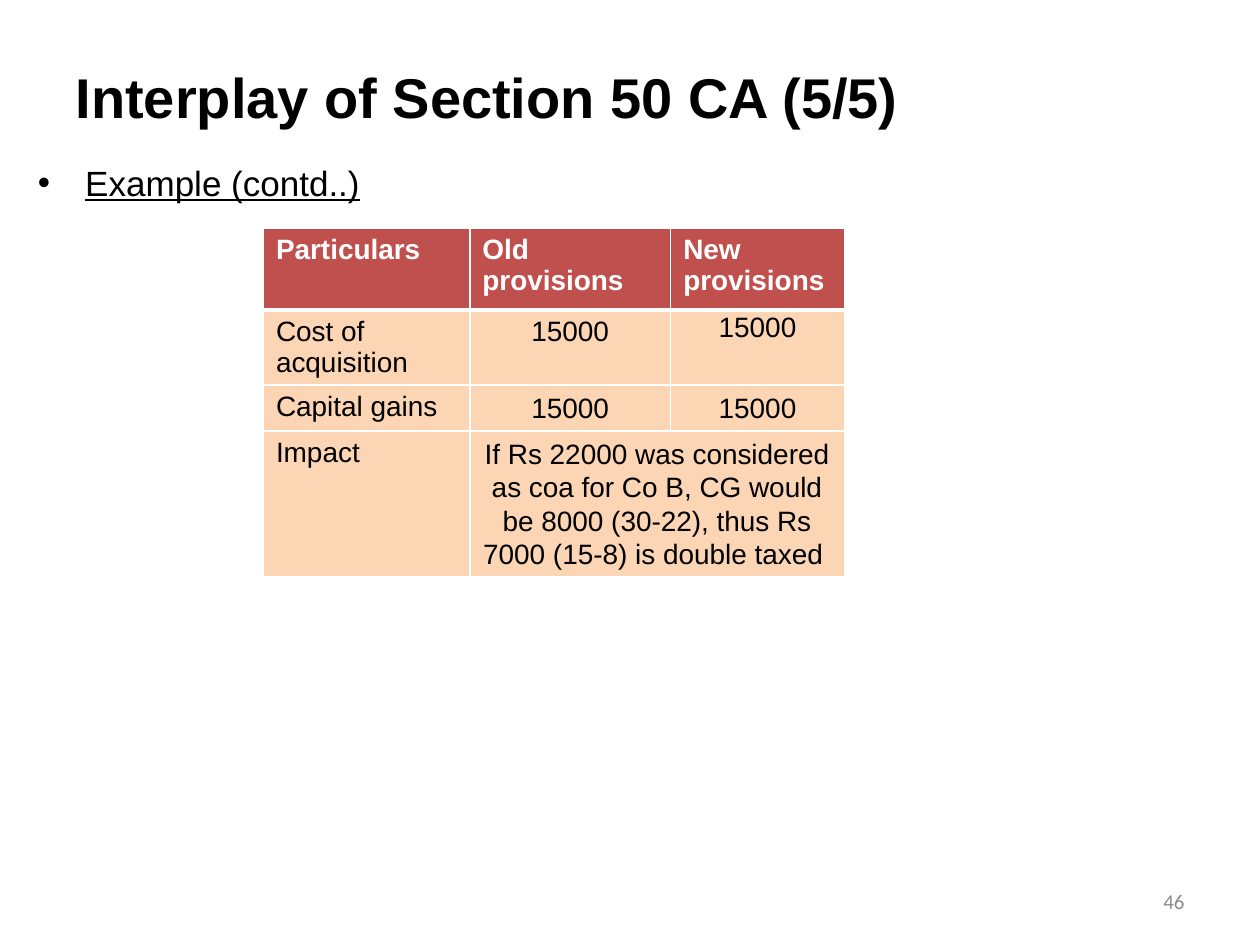
import dataclasses
import typing

import pptx
import pptx.dml.color
import pptx.enum.text
import pptx.oxml
import pptx.oxml.ns
import pptx.util

Cm = pptx.util.Cm
Align = pptx.enum.text.PP_ALIGN
Anchor = pptx.enum.text.MSO_ANCHOR


@dataclasses.dataclass(frozen=True)
class Theme:
    font: str = "Arial"
    foot_font: str = "Calibri"
    black: str = "000000"
    white: str = "FFFFFF"
    head: str = "C0504D"
    band: str = "FCD5B5"
    grey: str = "8C8C8C"
    title: int = 32
    body: int = 20
    cell: int = 16
    foot: int = 12


@dataclasses.dataclass(frozen=True)
class Entry:
    text: str
    align: typing.Any = Align.LEFT
    line: typing.Optional[float] = None
    tight: bool = False


THEME = Theme()
WIDTHS = (4.16, 4.05, 3.5)
HEIGHTS = (1.65, 1.5, 0.93, 2.92)
IMPACT = ("If Rs 22000 was considered as coa for Co B, CG would be "
          "8000 (30-22), thus Rs 7000 (15-8) is double taxed ")
SUM = Entry("15000", Align.CENTER, 1.07)
ROWS = (
    (Entry("Particulars"), Entry("Old provisions"), Entry("New provisions")),
    (Entry("Cost of acquisition"), Entry("15000", Align.CENTER),
     dataclasses.replace(SUM, tight=True)),
    (Entry("Capital gains"), SUM, SUM),
    (Entry("Impact"), Entry(IMPACT, Align.CENTER, 1.07)),
)


def place(shape, left: float, top: float, width: float, height: float) -> None:
    shape.left, shape.top = Cm(left), Cm(top)
    shape.width, shape.height = Cm(width), Cm(height)


def style(frame, size: int, color: str, font: str = THEME.font,
          bold: bool = False, align: typing.Any = Align.LEFT) -> None:
    for para in frame.paragraphs:
        para.alignment = align
        for run in para.runs:
            run.font.name = font
            run.font.size = pptx.util.Pt(size)
            run.font.bold = bold
            run.font.color.rgb = pptx.dml.color.RGBColor.from_string(color)


def border(cell, base: int) -> None:
    """Rule all four sides in white; base is the bottom width in points."""
    props = cell._tc.get_or_add_tcPr()
    for side, width in (("L", 1), ("R", 1), ("T", 1), ("B", base)):
        props.append(pptx.oxml.parse_xml(
            f'<a:ln{side} {pptx.oxml.ns.nsdecls("a")} w="{pptx.util.Pt(width)}">'
            f'<a:solidFill><a:srgbClr val="{THEME.white}"/></a:solidFill>'
            f'</a:ln{side}>'))


def paint(cell, head: bool, base: int) -> None:
    border(cell, base)
    cell.fill.solid()
    cell.fill.fore_color.rgb = pptx.dml.color.RGBColor.from_string(
        THEME.head if head else THEME.band)


def write(cell, entry: Entry, head: bool) -> None:
    frame = cell.text_frame
    frame.text = entry.text
    style(frame, THEME.cell, THEME.white if head else THEME.black,
          bold=head, align=entry.align)
    if entry.line:
        frame.paragraphs[0].line_spacing = entry.line
    if entry.tight:
        cell.margin_left = cell.margin_right = Cm(0.1)
        cell.margin_top = cell.margin_bottom = 0


def draw_table(slide) -> None:
    table = slide.shapes.add_table(
        len(ROWS), len(WIDTHS), Cm(5.31), Cm(4.6),
        Cm(sum(WIDTHS)), Cm(sum(HEIGHTS))).table
    for col, width in zip(table.columns, WIDTHS):
        col.width = Cm(width)
    for row, height in zip(table.rows, HEIGHTS):
        row.height = Cm(height)
    table.cell(3, 1).merge(table.cell(3, 2))
    for i, row in enumerate(ROWS):
        head = i == 0
        for cell in table.rows[i].cells:
            paint(cell, head, 3 if head else 1)
        for j, entry in enumerate(row):
            write(table.cell(i, j), entry, head)


def main() -> None:
    deck = pptx.Presentation()
    deck.slide_width, deck.slide_height = Cm(25.4), Cm(19.05)
    slide = deck.slides.add_slide(deck.slide_layouts[1])

    # Title
    title = slide.shapes.title
    place(title, 1.27, 0.76, 22.86, 2.36)
    title.text_frame.text = "Interplay of Section 50 CA (5/5)"
    title.text_frame.vertical_anchor = Anchor.MIDDLE
    style(title.text_frame, THEME.title, THEME.black, bold=True)

    # Bullet list
    body = slide.placeholders[1]
    place(body, 0.51, 3.12, 24.89, 15.47)
    body.text_frame.text = "Example (contd..)"
    style(body.text_frame, THEME.body, THEME.black, align=Align.JUSTIFY)
    body.text_frame.paragraphs[0].runs[0].font.underline = True

    # Comparison of provisions
    draw_table(slide)

    # Page number
    page = slide.shapes.add_textbox(Cm(18.21), Cm(17.65), Cm(5.92), Cm(1.02))
    page.text_frame.word_wrap = True
    page.text_frame.vertical_anchor = Anchor.MIDDLE
    page.text_frame.text = "46"
    style(page.text_frame, THEME.foot, THEME.grey, THEME.foot_font,
          align=Align.RIGHT)

    deck.save("out.pptx")


if __name__ == "__main__":
    main()
